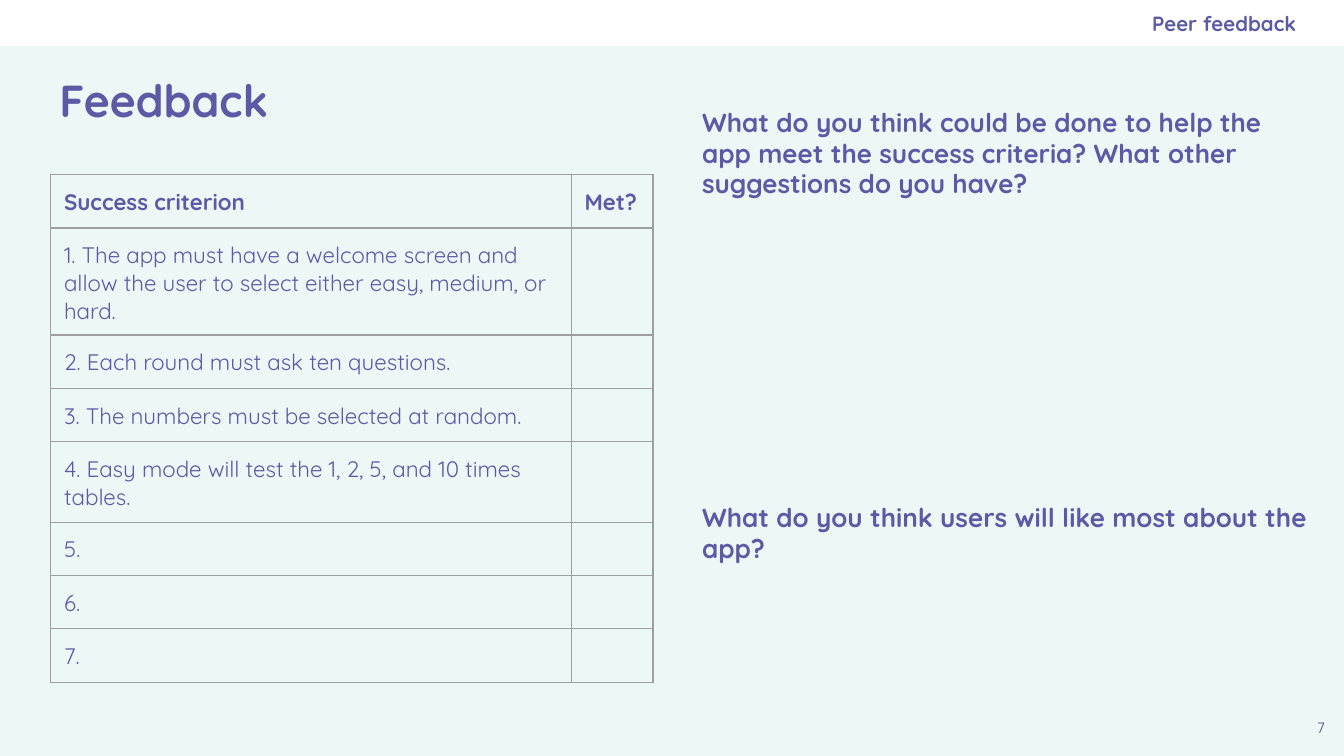
from dataclasses import dataclass

from lxml.etree import SubElement
from pptx import Presentation
from pptx.dml.color import RGBColor as Color
from pptx.enum.shapes import MSO_SHAPE as Shape
from pptx.enum.text import MSO_ANCHOR as Anchor, PP_ALIGN as Align
from pptx.oxml.ns import qn
from pptx.util import Cm, Pt


@dataclass(frozen=True)
class Theme:
    """Hold the colours, font and type sizes."""
    font: str = "Quicksand"
    background: str = "ECF8F5"
    bar: str = "FFFFFF"
    text: str = "5B5BA5"
    number: str = "494985"
    border: str = "9E9E9E"
    border_width: float = 0.75
    title_size: int = 24
    question_size: int = 14
    table_size: int = 12
    header_size: int = 11
    number_size: int = 8


THEME = Theme()
INSET = Cm(0.25)


def write(frame, text, size, color=THEME.text, bold=False, align=Align.LEFT,
          anchor=Anchor.TOP, right=INSET, spacing=1.0):
    """Write one formatted paragraph into a text frame."""
    frame.word_wrap = True
    frame.vertical_anchor = anchor
    frame.margin_left = frame.margin_top = frame.margin_bottom = INSET
    frame.margin_right = right
    paragraph = frame.paragraphs[0]
    paragraph.alignment = align
    paragraph.line_spacing = spacing
    run = paragraph.add_run()
    run.text = text
    run.font.name = THEME.font
    run.font.size = Pt(size)
    run.font.bold = bold
    run.font.color.rgb = Color.from_string(color)


class SlideBuilder:
    """Add styled elements to one slide."""

    def __init__(self, presentation, theme):
        """Start a title-only slide with a plain background."""
        self.theme = theme
        self.slide = presentation.slides.add_slide(presentation.slide_layouts[5])
        fill = self.slide.background.fill
        fill.solid()
        fill.fore_color.rgb = Color.from_string(theme.background)

    def bar(self, left, top, width, height):
        """Add a plain filled band."""
        shape = self.slide.shapes.add_shape(
            Shape.RECTANGLE, Cm(left), Cm(top), Cm(width), Cm(height))
        shape.shadow.inherit = False
        shape.fill.solid()
        shape.fill.fore_color.rgb = Color.from_string(self.theme.bar)
        shape.line.fill.background()

    def title(self, text, left, top, width, height):
        """Place and format the title placeholder."""
        title = self.slide.shapes.title
        title.left, title.top = Cm(left), Cm(top)
        title.width, title.height = Cm(width), Cm(height)
        write(title.text_frame, text, self.theme.title_size, bold=True,
              anchor=Anchor.MIDDLE)

    def text(self, text, left, top, width, height, size, **style):
        """Add a text box."""
        box = self.slide.shapes.add_textbox(Cm(left), Cm(top), Cm(width), Cm(height))
        write(box.text_frame, text, size, **style)

    def table(self, rows, left, top, widths, heights):
        """Add a bordered table with a bold first row."""
        table = self.slide.shapes.add_table(
            len(rows), len(widths), Cm(left), Cm(top),
            Cm(sum(widths)), Cm(sum(heights))).table
        table.first_row = table.horz_banding = False
        for column, width in zip(table.columns, widths):
            column.width = Cm(width)
        for index, (row, height) in enumerate(zip(rows, heights)):
            table.rows[index].height = Cm(height)
            for cell, text in zip(table.rows[index].cells, row):
                self.cell(cell, text, bold=index == 0)

    def cell(self, cell, text, bold):
        """Format one table cell and its four borders."""
        cell.margin_left = cell.margin_right = INSET
        cell.margin_top = cell.margin_bottom = INSET
        if text:
            write(cell.text_frame, text, self.theme.table_size, bold=bold)
        else:
            SubElement(cell.text_frame.paragraphs[0]._p, qn("a:endParaRPr"),
                       sz=str(self.theme.table_size * 100))
        properties = cell._tc.get_or_add_tcPr()
        for side in ("lnL", "lnR", "lnT", "lnB"):
            line = SubElement(properties, qn(f"a:{side}"),
                              w=str(Pt(self.theme.border_width)))
            fill = SubElement(line, qn("a:solidFill"))
            SubElement(fill, qn("a:srgbClr"), val=self.theme.border)
        cell.fill.background()


def main():
    """Build the peer feedback slide."""
    presentation = Presentation()
    presentation.slide_width, presentation.slide_height = Cm(25.4), Cm(14.29)
    builder = SlideBuilder(presentation, THEME)

    builder.bar(0, 0, 25.4, 0.87)
    builder.title("Feedback", 0.87, 0.89, 23.67, 1.98)
    builder.text("7", 24.53, 13.42, 0.87, 0.87, THEME.number_size,
                 color=THEME.number, align=Align.CENTER)
    builder.text("Peer feedback", 14.6, 0, 9.9, 0.87, THEME.header_size, bold=True,
                 align=Align.RIGHT, anchor=Anchor.MIDDLE, right=0)

    criteria = (
        "The app must have a welcome screen and allow the user to select "
        "either easy, medium, or hard.",
        "Each round must ask ten questions.",
        "The numbers must be selected at random.",
        "Easy mode will test the 1, 2, 5, and 10 times tables.",
        "", "", "",
    )
    rows = [("Success criterion", "Met?")]
    rows += [(f"{number}. {criterion}".strip(), "")
             for number, criterion in enumerate(criteria, 1)]
    builder.table(rows, 0.96, 3.3, (9.84, 1.54), [1, 1.48] + [1] * 6)

    questions = (
        ("What do you think could be done to help the app meet the success "
         "criteria? What other suggestions do you have?", 1.8, 1.37),
        ("What do you think users will like most about the app?", 9.27, 0.97),
    )
    for question, top, height in questions:
        builder.text(question, 13.02, top, 12.14, height, THEME.question_size,
                     bold=True, spacing=0.97)
    presentation.save("out.pptx")


if __name__ == "__main__":
    main()
